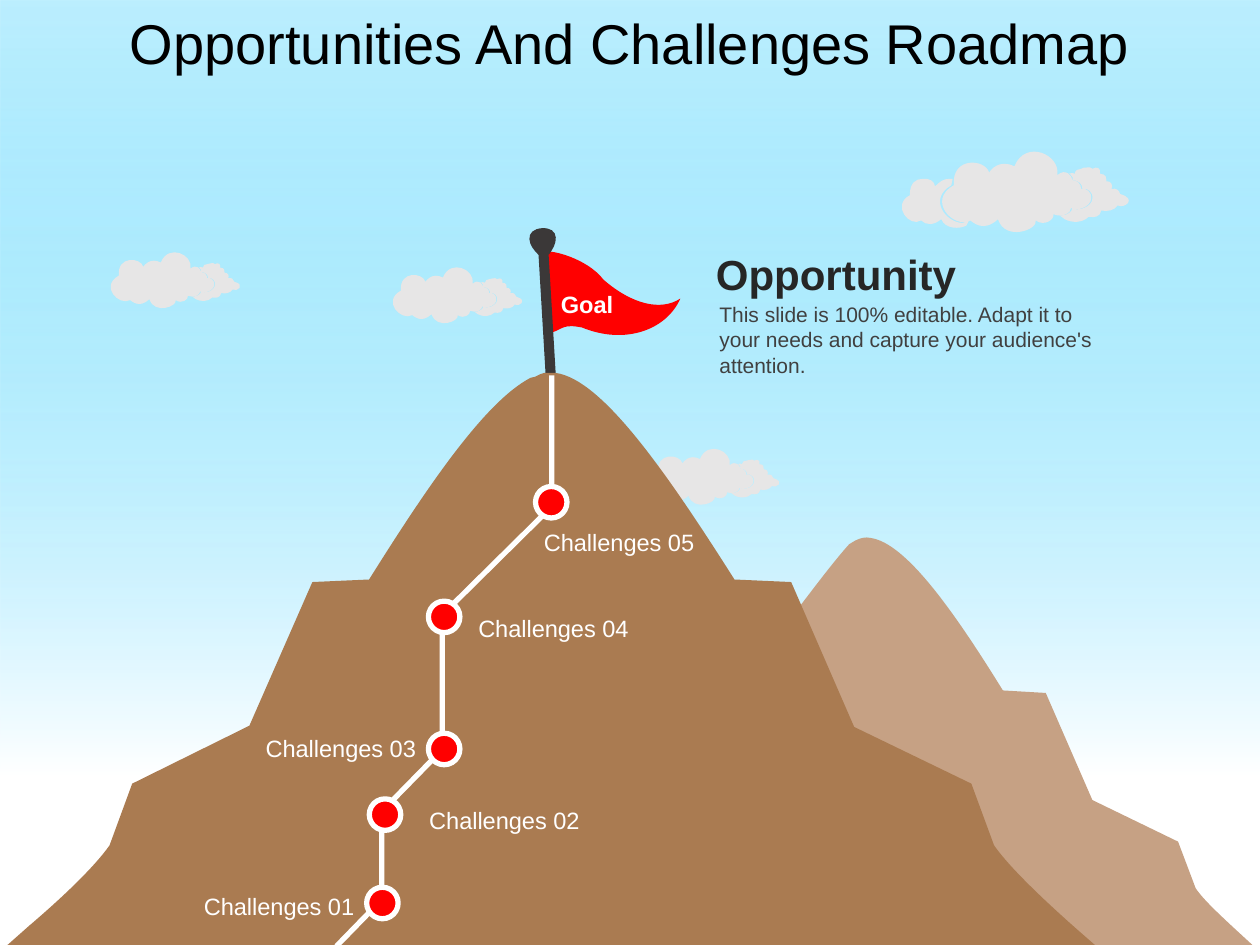
from lxml import etree
from pptx import Presentation
from pptx.dml.color import RGBColor
from pptx.enum.shapes import MSO_SHAPE
from pptx.enum.text import MSO_ANCHOR, PP_ALIGN
from pptx.oxml.ns import qn
from pptx.util import Pt

RECTANGLE, OVAL = MSO_SHAPE.RECTANGLE, MSO_SHAPE.OVAL
LEFT, CENTER, RIGHT = PP_ALIGN.LEFT, PP_ALIGN.CENTER, PP_ALIGN.RIGHT
MIDDLE = MSO_ANCHOR.MIDDLE
color = RGBColor.from_string
INCH_PERCENT = 0.72

CLOUD_LEFT = [
    (-16, 22), (-11, 21, -6, 24, -6, 28), (-2, 24, 1, 22, 5, 22), (8, 22),
    (7, 27), (-12, 38, 3, 57, 16, 57), (21, 55), (19, 59),
    (14, 62, 2, 62, -1, 54), (-7, 59, -13, 59, -17, 55),
    (-26, 61, -41, 43, -26, 35), (-26, 25, -21, 22, -16, 22)]
CLOUD_RIGHT = [
    (114, 13), (116, 12, 118, 13, 119, 14), (122, 12, 126, 13, 125, 18),
    (130, 18, 130, 21, 130, 24), (133, 23, 136, 27, 134, 30),
    (138, 29, 140, 31, 141, 34), (155, 38, 144, 46, 139, 43),
    (136, 47, 132, 48, 126, 47), (125, 52, 121, 53, 116, 52),
    (111, 57, 103, 57, 97, 54), (93, 51), (94, 51),
    (99, 51, 103, 48, 103, 45), (106, 48, 119, 45, 119, 37),
    (120, 34, 115, 28, 111, 30), (111, 26, 108, 23, 103, 23),
    (104, 22, 103, 19, 101, 18), (100, 18), (102, 17, 104, 17, 105, 18),
    (105, 15, 108, 14, 110, 14), (111, 13, 113, 13, 114, 13)]
CLOUD_MIDDLE = [
    (37, 17), (38, 15, 45, 6, 57, 12), (66, -10, 94, 3, 91, 19),
    (98, 13, 103, 20, 103, 23), (107, 23, 110, 26, 110, 30),
    (114, 28, 119, 34, 118, 37), (118, 45, 105, 48, 102, 45),
    (102, 49, 95, 53, 88, 50), (89, 54, 81, 60, 74, 55),
    (76, 62, 50, 72, 44, 54), (32, 65, 24, 56, 22, 55),
    (9, 62, -13, 39, 9, 27), (7, 4, 34, 6, 37, 17)]
FLAG = [
    (479, 222), (502, 242, 525, 247, 540, 237), (529, 262, 496, 274, 462, 260),
    (447, 257, 447, 261, 438, 264), (433, 200), (437, 198, 466, 205, 479, 222)]
POLE = [
    (434.5, 181), (441, 181, 445, 184, 445, 189), (445, 194, 442, 198, 439, 202),
    (438.5, 202), (438.5, 326), (430.5, 326), (430.5, 202),
    (427, 198, 424, 194, 424, 189), (424, 184, 428, 181, 434.5, 181)]
FAR_MOUNTAIN = [
    (691, 427), (719, 431, 757, 485, 796, 548), (830, 550), (867, 635),
    (935, 668), (949, 705), (955, 714, 968, 726, 982, 739), (994, 750),
    (610, 750), (610, 513), (632, 486, 656, 452, 674, 432), (679, 429),
    (683, 427, 687, 426, 691, 427)]
NEAR_MOUNTAIN = [
    (435, 296), (441, 296), (478, 301, 529, 375, 583, 460), (628, 462),
    (678, 577), (771, 622), (789, 671), (801, 688, 826, 712, 853, 736),
    (869, 750), (6, 750), (23, 735), (50, 712, 75, 688, 87, 671), (105, 622),
    (198, 576), (248, 462), (293, 460), (340, 385, 385, 319, 421, 300),
    (425, 299), (429, 297), (432, 296)]
ROUTE = [(267, 751), (303, 714), (303, 644), (351, 595), (351, 488),
         (438, 402), (438, 298)]

deck = Presentation()
deck.slide_width, deck.slide_height = Pt(720), Pt(540)
page = deck.slides.add_slide(deck.slide_layouts[5])


def draw(outline, fill=None, left=0, top=0, scale=INCH_PERCENT):
    steps = [[(Pt(left + x * scale), Pt(top + y * scale))
              for x, y in zip(step[::2], step[1::2])] for step in outline]
    points = sum(steps, [])
    builder = page.shapes.build_freeform(*points[0])
    builder.add_line_segments(points[1:], close=fill is not None)
    shape = builder.convert_to_shape()
    shape.shadow.inherit = False
    if fill:
        shape.fill.solid()
        shape.fill.fore_color.rgb = color(fill)
        shape.line.fill.background()
    else:
        shape.fill.background()

    outline_path = next(shape._element.iter(qn("a:path")))
    segments = iter(outline_path.findall(qn("a:lnTo")))
    reach = [points[0]]
    for before, step in zip(steps, steps[1:]):
        segment = next(segments)
        reach.append(step[-1])
        if len(step) == 3:
            segment.tag = qn("a:cubicBezTo")
            for _ in range(2):
                extra = next(segments)
                segment.append(extra[0])
                outline_path.remove(extra)
            for t in (0.25, 0.5, 0.75):
                u = 1 - t
                weights = (u**3, 3 * u * u * t, 3 * u * t * t, t**3)
                corners = [before[-1]] + step
                reach.append(tuple(round(sum(w * c[axis] for w, c in zip(weights, corners)))
                                   for axis in (0, 1)))

    xs, ys = zip(*reach)
    for point in outline_path.iter(qn("a:pt")):
        point.set("x", str(int(point.get("x")) + shape.left - min(xs)))
        point.set("y", str(int(point.get("y")) + shape.top - min(ys)))
    shape.left, shape.top = min(xs), min(ys)
    shape.width, shape.height = max(xs) - min(xs), max(ys) - min(ys)
    outline_path.set("w", str(shape.width))
    outline_path.set("h", str(shape.height))
    return shape


def write(text, left, top, width, height, size=13.5, fill="FFFFFF",
          bold=False, align=CENTER, wrap=False, box=None):
    box = box or page.shapes.add_textbox(0, 0, 0, 0)
    box.left, box.top, box.width, box.height = Pt(left), Pt(top), Pt(width), Pt(height)
    frame = box.text_frame
    frame.word_wrap = wrap
    frame.vertical_anchor = MIDDLE
    para = frame.paragraphs[0]
    para.alignment = align
    span = para.add_run()
    span.text = text
    span.font.name, span.font.size, span.font.bold = "Arial", Pt(size), bold
    span.font.color.rgb = color(fill)


sky = page.shapes.add_shape(RECTANGLE, 0, 0, Pt(720), Pt(540))
sky.shadow.inherit = False
sky.line.fill.background()
sky.fill.gradient()
sky.fill.gradient_angle = 270
for stop, place, tone in zip(sky.fill.gradient_stops, (0, 0.82), ("1BC7FD", "FFFFFF")):
    stop.position = place
    stop.color.rgb = color(tone)
top_tone = next(sky._element.iter(qn("a:srgbClr")))
etree.SubElement(top_tone, qn("a:alpha")).set("val", "29000")
page.shapes._spTree.insert(2, sky._element)

write("Opportunities And Challenges Roadmap", 38, 1.5, 644, 45, size=32,
      fill="000000", wrap=True, box=page.shapes.title)

SMALL = [CLOUD_RIGHT, CLOUD_MIDDLE]
clouds = [(371.5, 256.3, 0.5, SMALL), (538.6, 86.4, 0.72, [CLOUD_LEFT] + SMALL),
          (63.4, 144, 0.5, SMALL), (224.6, 152.6, 0.5, SMALL)]
for left, top, scale, parts in clouds:
    for part in parts:
        draw(part, "E7E6E6", left, top, scale)

draw(FLAG, "FF0000")
pole = draw(POLE, "3B3838")
pole.rotation = 356.6
write("Goal", 313, 161.5, 45, 24, bold=True)
draw(FAR_MOUNTAIN, "C6A184")
draw(NEAR_MOUNTAIN, "AA7B51")
route = draw(ROUTE)
route.line.color.rgb = color("FFFFFF")
route.line.width = Pt(3)

challenges = [
    (209.5, 507, 108, 505.5, RIGHT), (211, 456.5, 237.5, 456.5, CENTER),
    (244.8, 419, 143.3, 415.5, RIGHT), (244.8, 343.5, 265.5, 347, CENTER),
    (306, 278, 303, 297.5, CENTER)]
for number, (dot_left, dot_top, left, top, align) in enumerate(challenges, 1):
    dot = page.shapes.add_shape(OVAL, Pt(dot_left), Pt(dot_top), Pt(18), Pt(18))
    dot.shadow.inherit = False
    dot.fill.solid()
    dot.fill.fore_color.rgb = color("FF0000")
    dot.line.color.rgb = color("FFFFFF")
    dot.line.width = Pt(3)
    write(f"Challenges {number:02}", left, top, 101.5, 24, align=align)

write("Opportunity", 402, 138.5, 153, 36, size=24, fill="262626", bold=True, align=LEFT)
write("This slide is 100% editable. Adapt it to your needs and capture your "
      "audience's attention.", 404, 168.5, 239, 51, size=12, fill="404040",
      align=LEFT, wrap=True)

deck.save("out.pptx")
